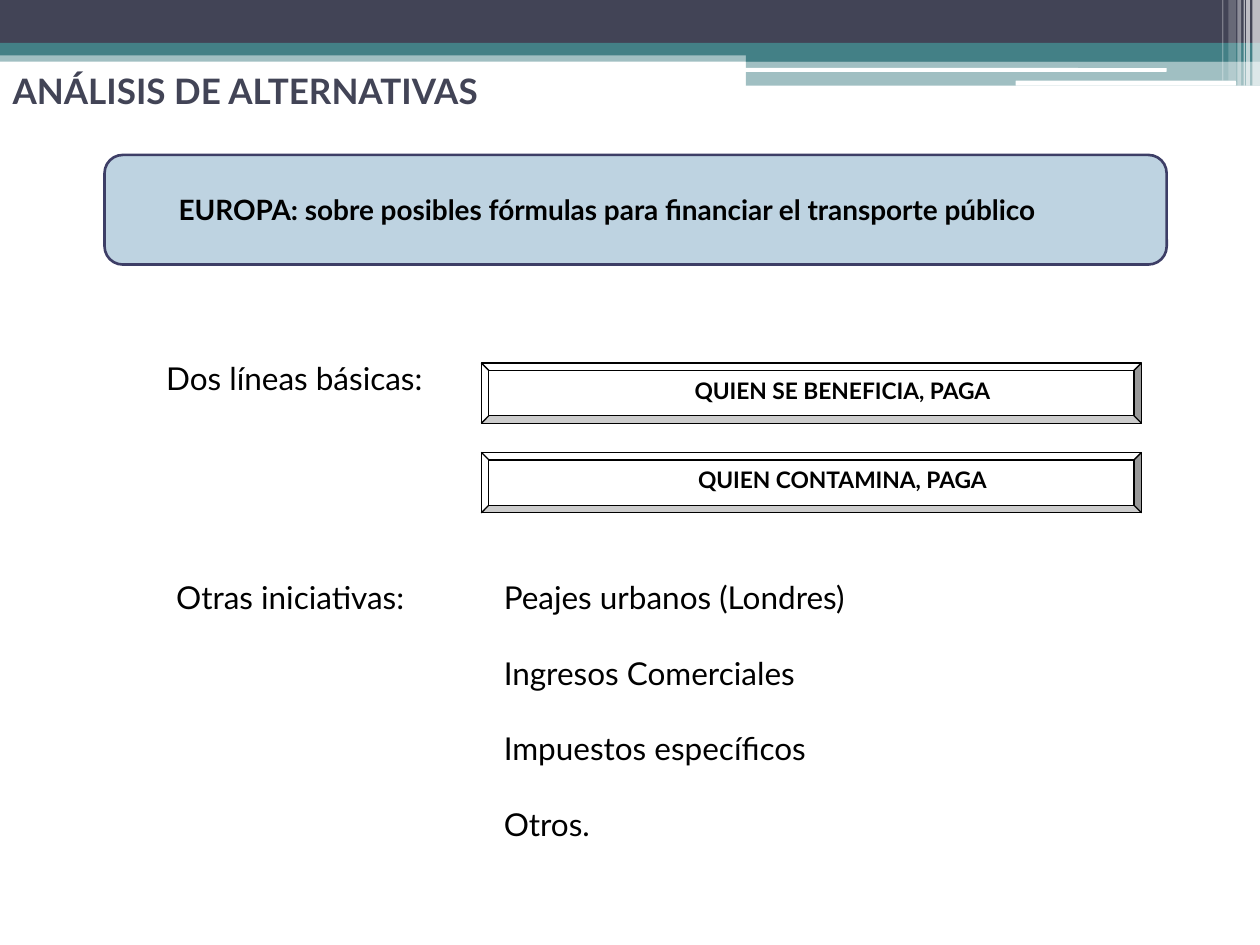
from lxml import etree
from pptx import Presentation
from pptx.dml.color import RGBColor
from pptx.enum.shapes import MSO_SHAPE as Shape
from pptx.enum.text import MSO_ANCHOR as Anchor, PP_ALIGN as Align
from pptx.oxml.ns import qn
from pptx.util import Inches, Pt

WHITE = RGBColor(0xFF, 0xFF, 0xFF)
BLACK = RGBColor(0x00, 0x00, 0x00)
NAVY = RGBColor(0x42, 0x44, 0x56)
TEAL = RGBColor(0x43, 0x80, 0x86)
PALE_BLUE = RGBColor(0xBE, 0xD3, 0xE1)
INDIGO = RGBColor(0x3D, 0x3E, 0x66)
FONT = "Lato"
FIRST_LINE_INDENT = Inches(0.49)


def add_filled(slide, kind, box, color, alpha=100, line=None, line_width=1):
    """Add a preset shape with a solid, optionally translucent fill."""
    shape = slide.shapes.add_shape(kind, *map(Inches, box))
    shape.shadow.inherit = False
    shape.fill.solid()
    shape.fill.fore_color.rgb = color
    if alpha < 100:
        color_element = shape.fill._xPr.find(".//" + qn("a:srgbClr"))
        etree.SubElement(color_element, qn("a:alpha"), val=str(alpha * 1000))
    if line is None:
        shape.line.fill.background()
    else:
        shape.line.color.rgb = line
        shape.line.width = Pt(line_width)
    return shape


def write_run(paragraph, text, size, color=BLACK, bold=False):
    """Add one formatted run to a paragraph."""
    run = paragraph.add_run()
    run.text = text
    run.font.name = FONT
    run.font.size = Pt(size)
    run.font.bold = bold
    run.font.color.rgb = color


def indent_first_line(paragraph):
    """Indent the first line of a paragraph."""
    properties = paragraph._p.get_or_add_pPr()
    properties.set("marL", "0")
    properties.set("indent", str(FIRST_LINE_INDENT))


def add_text(slide, box, lines, size, bold=False, wrap=False, gap=0):
    """Add a text box with one paragraph per line and return its paragraphs."""
    frame = slide.shapes.add_textbox(*map(Inches, box)).text_frame
    frame.word_wrap = wrap
    for index, line in enumerate(lines):
        paragraph = frame.add_paragraph() if index else frame.paragraphs[0]
        paragraph.space_before = Pt(gap if index else 0)
        write_run(paragraph, line, size, bold=bold)
    return frame.paragraphs


def add_header_bands(slide, width):
    """Draw the header bands, their white cuts and the stripes at the right."""
    step = 5.92
    for left, top, height, color, alpha in (
        (0, 0.4, 0.09, TEAL, 50),
        (0, 0, 0.34, NAVY, 100),
        (0, 0.34, 0.1, TEAL, 100),
        (step, 0.39, 0.1, TEAL, 100),
        (step, 0.48, 0.2, TEAL, 50),
    ):
        add_filled(slide, Shape.RECTANGLE, (left, top, width - left, height), color, alpha)
    for box in ((5.91, 0.54, 3.35, 0.03), (8.06, 0.64, 1.75, 0.04)):
        add_filled(slide, Shape.ROUNDED_RECTANGLE, box, WHITE)
    for left, stripe_width, height, alpha in (
        (9.94, 0.06, 0.68, 65),
        (9.89, 0.03, 0.68, 65),
        (9.87, 0.01, 0.68, 60),
        (9.82, 0.03, 0.68, 40),
        (9.75, 0.06, 0.64, 20),
        (9.7, 0.01, 0.64, 30),
    ):
        add_filled(slide, Shape.RECTANGLE, (left, 0, stripe_width, height), WHITE, alpha)


def add_title(slide, box, text):
    """Place and format the title placeholder."""
    title = slide.shapes.title
    title.left, title.top, title.width, title.height = map(Inches, box)
    title.text_frame.vertical_anchor = Anchor.MIDDLE
    paragraph = title.text_frame.paragraphs[0]
    paragraph.alignment = Align.LEFT
    write_run(paragraph, text, 20, NAVY, True)


def add_topic_panel(slide, box, text):
    """Draw the rounded panel with its topic sentence."""
    left, top, width, height = box
    add_filled(slide, Shape.ROUNDED_RECTANGLE, box, PALE_BLUE, line=INDIGO, line_width=1.5)
    text_box = (left, top + 0.25, width - 0.16, 0.37)
    indent_first_line(add_text(slide, text_box, [text], 16, bold=True)[0])


def add_principles(slide, box, label, principles):
    """Place a label beside a stack of bevelled boxes."""
    left, top, width, height = box
    bevel_left, bevel_height, pitch = left + 2.6, 0.48, 0.71
    add_text(slide, (left, top, 2.3, 0.4), [label], 18)
    for index, principle in enumerate(principles):
        bevel_box = (bevel_left, top + 0.08 + index * pitch,
                     left + width - bevel_left, bevel_height)
        bevel = add_filled(slide, Shape.BEVEL, bevel_box, WHITE, line=BLACK, line_width=0.75)
        bevel.adjustments[0] = 0.125
        bevel.text_frame.vertical_anchor = Anchor.TOP
        paragraph = bevel.text_frame.paragraphs[0]
        paragraph.alignment = Align.CENTER
        indent_first_line(paragraph)
        write_run(paragraph, principle, 13, bold=True)


def add_initiatives(slide, box, label, initiatives):
    """Place a label beside a spaced list of initiatives."""
    left, top, width, height = box
    list_offset = 2.6
    add_text(slide, (left, top, 2.12, 0.4), [label], 18)
    list_box = (left + list_offset, top, width - list_offset, height)
    add_text(slide, list_box, initiatives, 18, wrap=True, gap=21.6)


def main():
    """Build the slide and save it."""
    presentation = Presentation()
    presentation.slide_width, presentation.slide_height = Inches(10), Inches(7.5)
    slide = presentation.slides.add_slide(presentation.slide_layouts[5])
    add_header_bands(slide, 10)
    add_title(slide, (0, 0.13, 9, 1.17), "ANÁLISIS DE ALTERNATIVAS")
    add_topic_panel(slide, (0.83, 1.23, 8.43, 0.87),
                    "EUROPA: sobre posibles fórmulas para financiar el transporte público")
    add_principles(slide, (1.22, 2.8, 7.84, 1.27), "Dos líneas básicas:",
                   ["QUIEN SE BENEFICIA, PAGA", "QUIEN CONTAMINA, PAGA"])
    add_initiatives(slide, (1.3, 4.54, 8.03, 2.22), "Otras iniciativas:",
                    ["Peajes urbanos (Londres)", "Ingresos Comerciales",
                     "Impuestos específicos", "Otros."])
    presentation.save("out.pptx")


if __name__ == "__main__":
    main()
